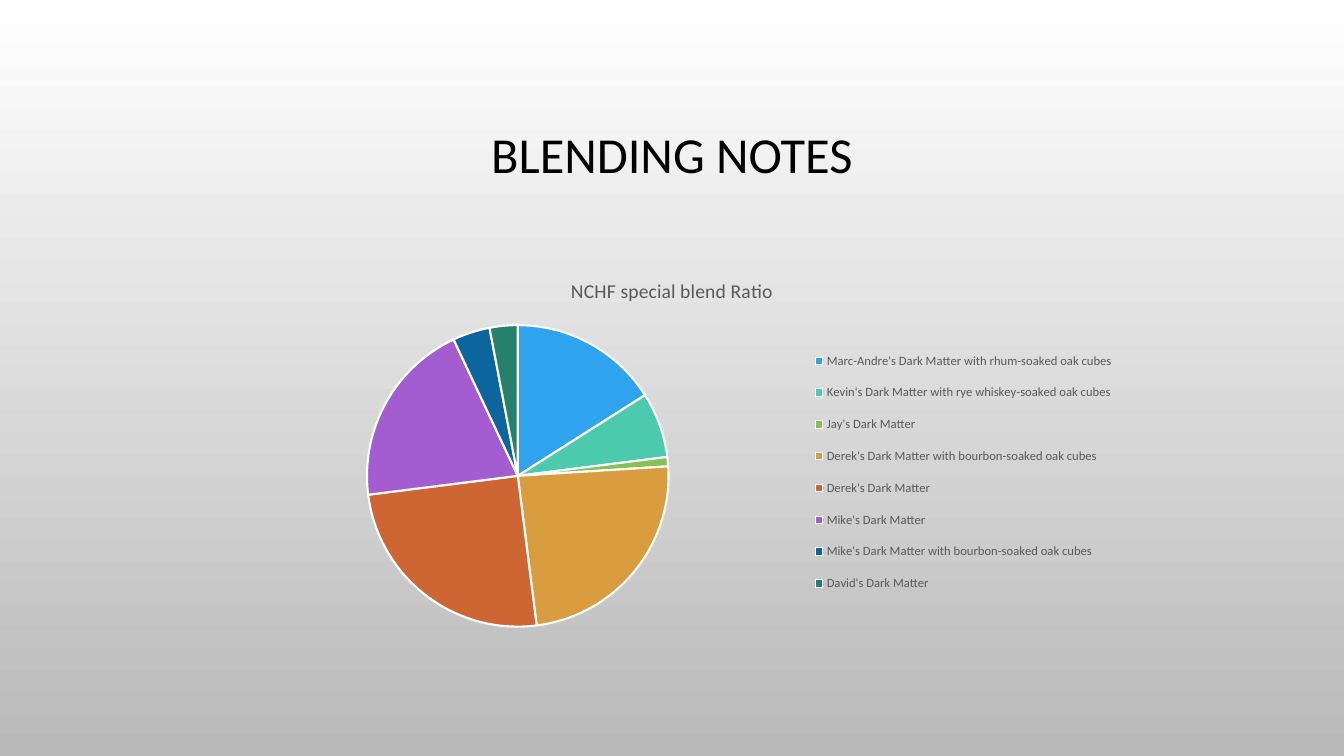
from dataclasses import dataclass

from lxml import etree
from pptx import Presentation
from pptx.chart.data import CategoryChartData
from pptx.dml.color import RGBColor
from pptx.enum.chart import XL_CHART_TYPE, XL_LEGEND_POSITION
from pptx.enum.text import MSO_ANCHOR, PP_ALIGN
from pptx.oxml.ns import qn
from pptx.util import Pt

PIE = XL_CHART_TYPE.PIE
RIGHT = XL_LEGEND_POSITION.RIGHT
MIDDLE = MSO_ANCHOR.MIDDLE
CENTER = PP_ALIGN.CENTER


@dataclass(frozen=True)
class Theme:
    face: str = "Calibri"
    ink: str = "000000"
    gray: str = "595959"
    edge: str = "FFFFFF"
    fade: tuple = ("FFFFFF", "B9B9B9")
    head: int = 36
    title: int = 14
    base: int = 10
    key: int = 9


theme = Theme()


def style(font, size, color):
    font.name = theme.face
    font.size = Pt(size)
    font.bold = False
    font.color.rgb = RGBColor.from_string(color)


def layout(box, inner):
    for old in box.findall(qn("c:layout")):
        box.remove(old)
    node = etree.Element(qn("c:layout"))
    manual = etree.SubElement(node, qn("c:manualLayout"))
    modes = [("layoutTarget", "inner")] if inner else []
    modes += [("xMode", "edge"), ("yMode", "edge")]
    for name, value in modes + list(zip("xywh", inner or KEY_BOX)):
        etree.SubElement(manual, qn(f"c:{name}")).set("val", str(value))
    return node


PIE_BOX = (0.23, 0.17, 0.27, 0.8)
KEY_BOX = (0.62, 0.2, 0.27, 0.72)

BLEND = [
    ("Marc-Andre's Dark Matter with rhum-soaked oak cubes", 16, "2FA3EE"),
    ("Kevin's Dark Matter with rye whiskey-soaked oak cubes", 7, "4BCAAD"),
    ("Jay's Dark Matter", 1, "86C157"),
    ("Derek's Dark Matter with bourbon-soaked oak cubes", 24, "D99C3F"),
    ("Derek's Dark Matter", 25, "CE6633"),
    ("Mike's Dark Matter", 20, "A35DD1"),
    ("Mike's Dark Matter with bourbon-soaked oak cubes", 4, "0D659E"),
    ("David's Dark Matter", 3, "26806C"),
]

deck = Presentation()
deck.slide_width, deck.slide_height = Pt(960), Pt(540)
slide = deck.slides.add_slide(deck.slide_layouts[6])

back = slide.background.fill
back.gradient()
back.gradient_angle = 270
for stop, color, place in zip(back.gradient_stops, theme.fade, (0, 1)):
    stop.color.rgb = RGBColor.from_string(color)
    stop.position = place

head = slide.shapes.add_textbox(Pt(72), Pt(49), Pt(816), Pt(126)).text_frame
head.word_wrap = True
head.vertical_anchor = MIDDLE
line = head.paragraphs[0]
line.alignment = CENTER
line.line_spacing = 0.9
run = line.add_run()
run.text = "BLENDING NOTES"
style(run.font, theme.head, theme.ink)

data = CategoryChartData()
data.categories = [name for name, share, color in BLEND]
data.add_series("Series 1", [share for name, share, color in BLEND])
frame = slide.shapes.add_chart(PIE, Pt(72), Pt(186.5), Pt(816), Pt(269.3), data)
chart = frame.chart
style(chart.font, theme.base, theme.ink)

chart.has_title = True
run = chart.chart_title.text_frame.paragraphs[0].add_run()
run.text = "NCHF special blend Ratio"
style(run.font, theme.title, theme.gray)

chart.has_legend = True
legend = chart.legend
legend.position = RIGHT
legend.include_in_layout = False
style(legend.font, theme.key, theme.gray)

plot = chart.plots[0]
plot.vary_by_categories = True
for index, (name, share, color) in enumerate(BLEND):
    slice = plot.series[0].points[index].format
    slice.fill.solid()
    slice.fill.fore_color.rgb = RGBColor.from_string(color)
    slice.line.color.rgb = RGBColor.from_string(theme.edge)
    slice.line.width = Pt(1.5)

root = chart.element if hasattr(chart, "element") else chart._chartSpace
area = next(root.iter(qn("c:plotArea")))
area.insert(0, layout(area, PIE_BOX))
key = next(root.iter(qn("c:legend")))
spot = layout(key, None)
key.find(qn("c:legendPos")).addnext(spot)

deck.save("out.pptx")
